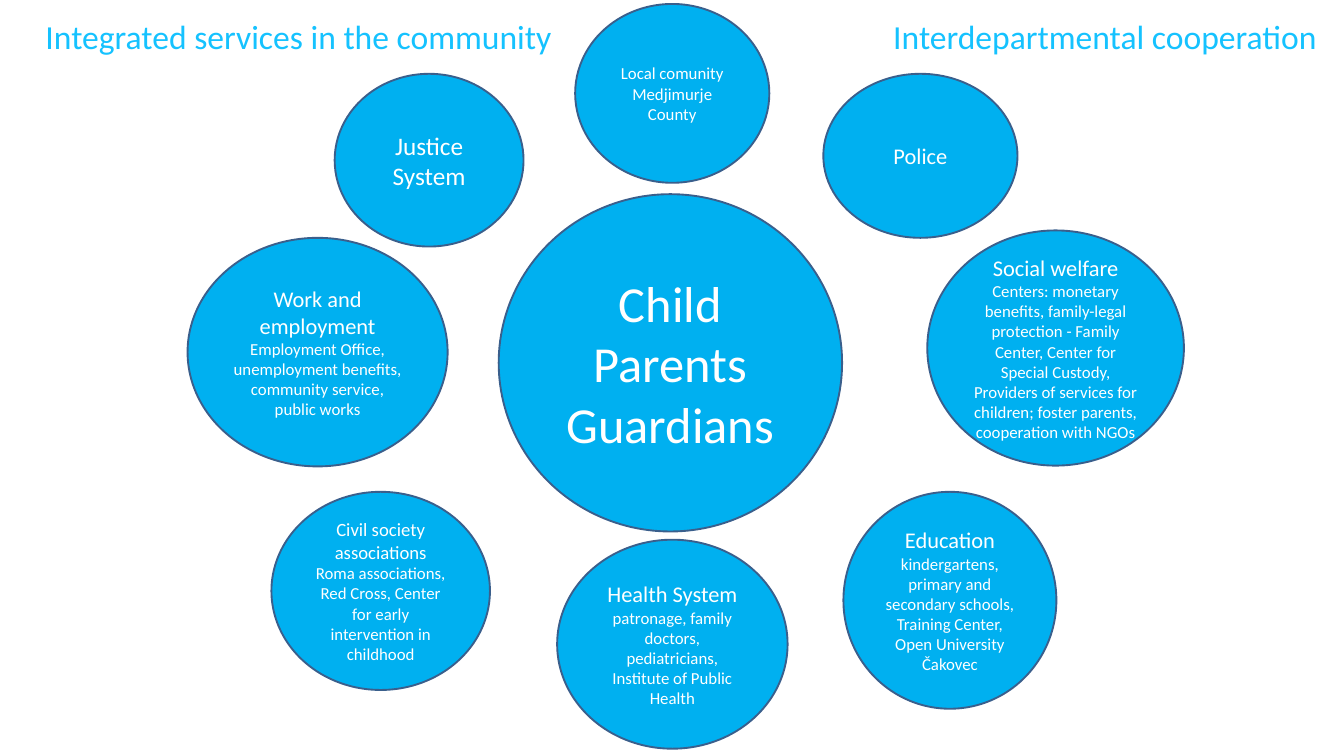
"""Build a slide of the services that surround a child and its family."""
import pptx
import pptx.dml.color
import pptx.enum.shapes
import pptx.enum.text
import pptx.util

COLOURS = {"circle": "00B0F0", "outline": "3A5F8C", "label": "FFFFFF", "heading": "15C2FF"}
FONT = "Calibri"
ALIGN = pptx.enum.text.PP_ALIGN

HEADINGS = [
    ("Integrated services in the community", (1.47, 0.48, 20.27, 1.8), ALIGN.LEFT),
    ("Interdepartmental cooperation", (31.88, 0.48, 18.14, 1.8), ALIGN.RIGHT),
]

CIRCLES = [
    ((18.85, 7.34, 12.98, 12.75), [("Child", 54), ("Parents", 54), ("Guardians", 54)]),
    ((12.65, 2.79, 7.14, 6.53), [("Justice System", 27)]),
    ((7.09, 8.99, 9.83, 8.64), [
        ("Work and employment", 24),
        ("Employment Office, unemployment benefits, community service, public works", 18)]),
    ((21.74, 0.15, 7.34, 6.76), [("Local comunity", 18), ("Medjimurje County", 18)]),
    ((31.12, 2.79, 7.34, 6.2), [("Police", 24)]),
    ((35.05, 8.71, 9.7, 8.89), [
        ("Social welfare", 24),
        ("Centers: monetary benefits, family-legal protection - Family Center, "
         "Center for Special Custody, Providers of services for children; "
         "foster parents, cooperation with NGOs", 18)]),
    ((10.26, 18.59, 8.26, 7.49), [
        ("Civil society associations", 20),
        ("Roma associations, Red Cross, Center for early intervention in childhood", 18)]),
    ((21.06, 20.4, 8.71, 7.9), [
        ("Health System", 24),
        ("patronage, family doctors, pediatricians, Institute of Public Health", 18)]),
    ((31.88, 18.59, 8.05, 8.2), [
        ("Education", 24),
        ("kindergartens, primary and secondary schools, Training Center, "
         "Open University Čakovec", 18)]),
]


def colour(part):
    return pptx.dml.color.RGBColor.from_string(COLOURS[part])


def lengths(box):
    return [pptx.util.Cm(value) for value in box]


def write(frame, lines, part, alignment):
    frame.word_wrap = True
    frame.text = "\n".join(text for text, _ in lines)
    for paragraph, (_, size) in zip(frame.paragraphs, lines):
        paragraph.alignment = alignment
        font = paragraph.runs[0].font
        font.name = FONT
        font.size = pptx.util.Pt(size)
        font.color.rgb = colour(part)


def add_circle(slide, box, lines):
    circle = slide.shapes.add_shape(pptx.enum.shapes.MSO_SHAPE.OVAL, *lengths(box))
    circle.shadow.inherit = False
    circle.fill.solid()
    circle.fill.fore_color.rgb = colour("circle")
    circle.line.color.rgb = colour("outline")
    circle.line.width = pptx.util.Pt(2)
    circle.text_frame.vertical_anchor = pptx.enum.text.MSO_ANCHOR.MIDDLE
    write(circle.text_frame, lines, "label", ALIGN.CENTER)


def add_heading(slide, text, box, alignment):
    heading = slide.shapes.add_textbox(*lengths(box))
    heading.text_frame.auto_size = pptx.enum.text.MSO_AUTO_SIZE.SHAPE_TO_FIT_TEXT
    write(heading.text_frame, [(text, 36)], "heading", alignment)


def main():
    deck = pptx.Presentation()
    deck.slide_width, deck.slide_height = lengths((50.8, 28.575))
    slide = deck.slides.add_slide(deck.slide_layouts[6])
    for box, lines in CIRCLES:
        add_circle(slide, box, lines)
    for text, box, alignment in HEADINGS:
        add_heading(slide, text, box, alignment)
    deck.save("out.pptx")


if __name__ == "__main__":
    main()
